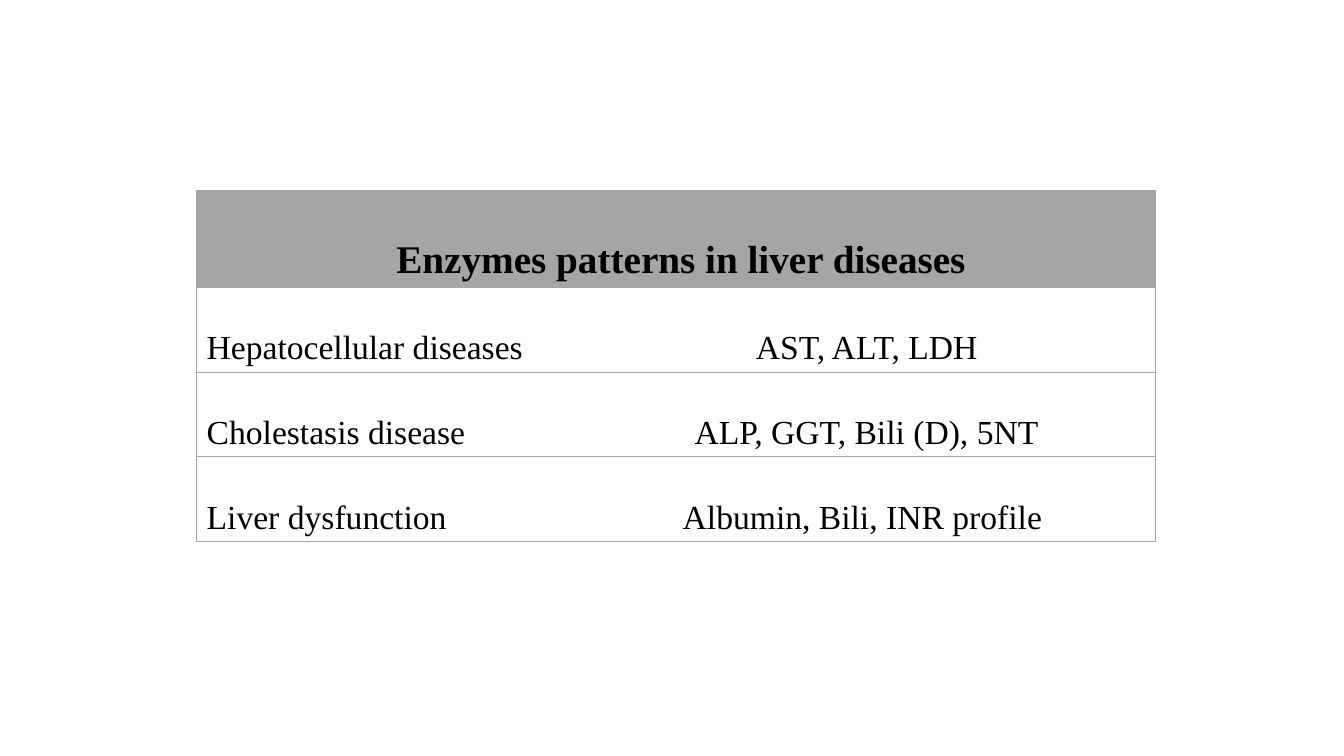
import dataclasses

import lxml.etree
import pptx
import pptx.dml.color
import pptx.enum.text
import pptx.oxml.ns
import pptx.util

Inches = pptx.util.Inches
ALIGN = pptx.enum.text.PP_ALIGN


@dataclasses.dataclass(frozen=True)
class Theme:
    font: str = "Times New Roman"
    ink: str = "000000"
    paper: str = "FFFFFF"
    gray: str = "A5A5A5"
    header_size: int = 28
    body_size: int = 24
    border_width: float = 0.5
    line_spacing: float = 2.0


def write_text(text_frame, text, *, theme, size, bold=False, align=ALIGN.LEFT):
    paragraph = text_frame.paragraphs[0]
    paragraph.alignment = align
    paragraph.line_spacing = theme.line_spacing
    run = paragraph.add_run()
    run.text = text
    run.font.name = theme.font
    run.font.size = pptx.util.Pt(size)
    run.font.bold = bold
    run.font.color.rgb = pptx.dml.color.RGBColor.from_string(theme.ink)


class SlideBuilder:
    def __init__(self, slide, theme):
        self.slide = slide
        self.theme = theme

    def border(self, cell, hidden_edges=()):
        qualify = pptx.oxml.ns.qn
        properties = cell._tc.get_or_add_tcPr()
        width = str(pptx.util.Pt(self.theme.border_width))
        for edge in ("lnL", "lnR", "lnT", "lnB"):
            line = lxml.etree.SubElement(properties, qualify(f"a:{edge}"), w=width)
            if edge in hidden_edges:
                lxml.etree.SubElement(line, qualify("a:noFill"))
            else:
                fill = lxml.etree.SubElement(line, qualify("a:solidFill"))
                lxml.etree.SubElement(fill, qualify("a:srgbClr"), val=self.theme.gray)

    def cell(self, cell, text, fill, hidden_edges=(), **text_format):
        self.border(cell, hidden_edges)
        cell.fill.solid()
        cell.fill.fore_color.rgb = pptx.dml.color.RGBColor.from_string(fill)
        cell.vertical_anchor = pptx.enum.text.MSO_ANCHOR.BOTTOM
        if text:
            write_text(cell.text_frame, text, theme=self.theme, **text_format)

    def table(self, header, rows, left, top, column_widths, header_height, row_height):
        theme = self.theme
        frame = self.slide.shapes.add_table(
            len(rows) + 1, len(column_widths), Inches(left), Inches(top),
            Inches(sum(column_widths)), Inches(header_height + row_height * len(rows)))
        table = frame.table
        for column, width in zip(table.columns, column_widths):
            column.width = Inches(width)
        for index, row in enumerate(table.rows):
            row.height = Inches(row_height if index else header_height)

        table.cell(0, 0).merge(table.cell(0, len(column_widths) - 1))
        for column, text in enumerate((header, "")):
            self.cell(table.cell(0, column), text, theme.gray,
                      size=theme.header_size, bold=True, align=ALIGN.CENTER)
        for row, (disease, enzymes) in enumerate(rows, start=1):
            self.cell(table.cell(row, 0), disease, theme.paper, ("lnR",),
                      size=theme.body_size)
            self.cell(table.cell(row, 1), enzymes, theme.paper, ("lnL",),
                      size=theme.body_size, align=ALIGN.CENTER)


def main():
    """Build the slide of enzyme patterns in liver diseases."""
    presentation = pptx.Presentation()
    presentation.slide_width = Inches(13.33)
    presentation.slide_height = Inches(7.5)
    slide = presentation.slides.add_slide(presentation.slide_layouts[6])
    builder = SlideBuilder(slide, Theme())
    builder.table(
        " Enzymes patterns in liver diseases",
        [
            ("Hepatocellular diseases", "AST, ALT, LDH"),
            ("Cholestasis disease", "ALP, GGT, Bili (D), 5NT"),
            ("Liver dysfunction", "Albumin, Bili, INR profile "),
        ],
        left=1.95, top=1.89, column_widths=(3.78, 5.73),
        header_height=0.96, row_height=0.84)
    presentation.save("out.pptx")


if __name__ == "__main__":
    main()
